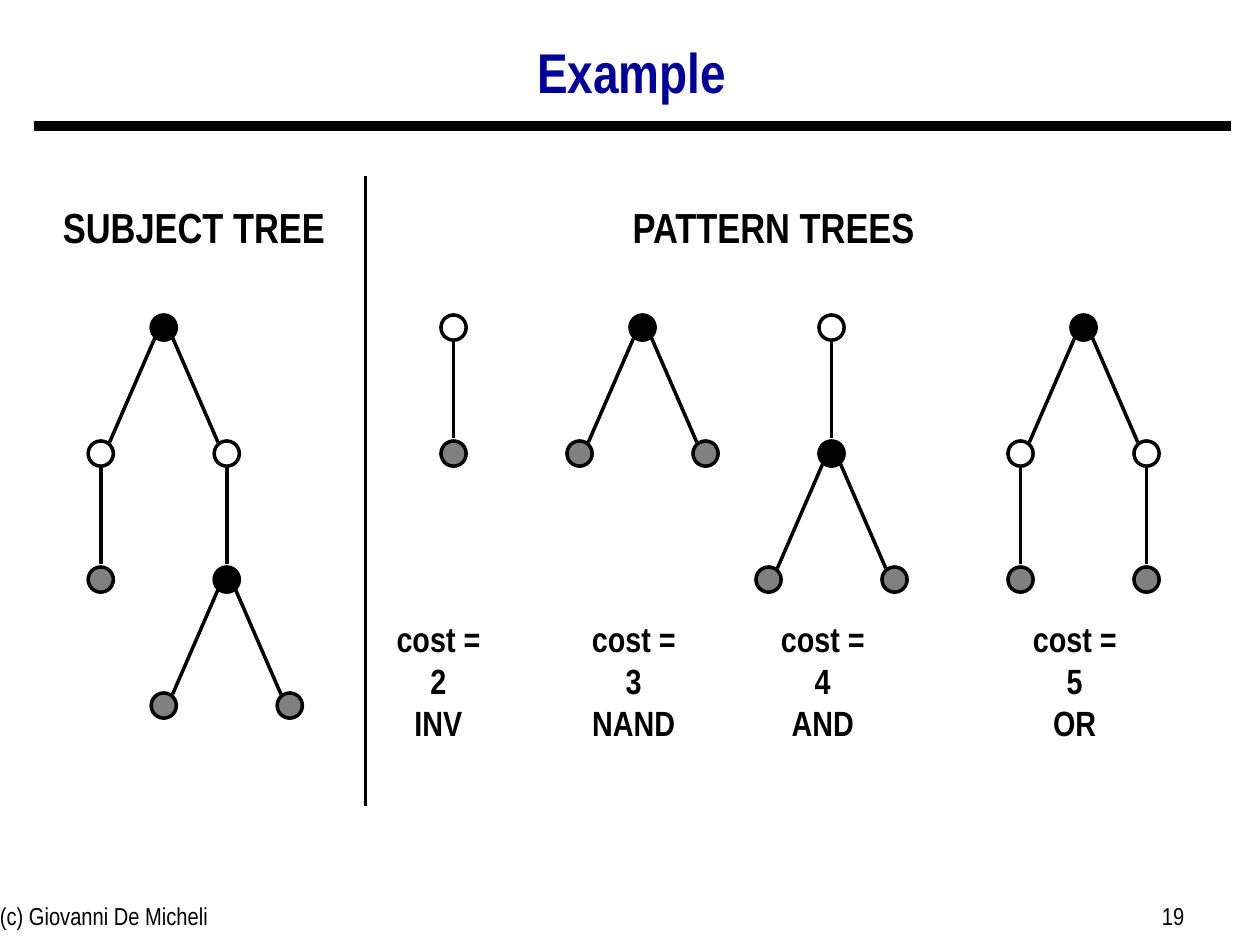
from lxml import etree
from pptx import Presentation
from pptx.dml.color import RGBColor
from pptx.enum.shapes import MSO_CONNECTOR, MSO_SHAPE
from pptx.enum.text import MSO_ANCHOR, PP_ALIGN
from pptx.oxml.ns import qn
from pptx.util import Inches, Pt

STRAIGHT = MSO_CONNECTOR.STRAIGHT
OVAL = MSO_SHAPE.OVAL
MIDDLE = MSO_ANCHOR.MIDDLE
LEFT, CENTER, RIGHT = PP_ALIGN.LEFT, PP_ALIGN.CENTER, PP_ALIGN.RIGHT

FONT = "Arial Narrow"
COLORS = {"black": "000000", "gray": "808080", "title": "000099"}

# A tree is (node kind, child trees); kinds map to fills, None is hollow
FILLS = {"nand": "black", "inv": None, "leaf": "gray"}
LEAF = ("leaf", [])
INV = ("inv", [LEAF])
NAND = ("nand", [LEAF, LEAF])
AND = ("inv", [NAND])
OR = ("nand", [INV, INV])
SUBJECT = ("nand", [INV, AND])

SUBJECT_X = 1.3
PATTERNS = [  # tree, root x, label left, label lines
    (INV, 3.6, 3.13, ["cost = 2", "INV"]),
    (NAND, 5.1, 4.68, ["cost = 3", "NAND"]),
    (AND, 6.6, 6.18, ["cost = 4", "AND"]),
    (OR, 8.6, 8.18, ["cost = 5", "OR"]),
]
HEADINGS = [("SUBJECT TREE", 0.5, 2.08), ("PATTERN TREES", 5, 2.28)]
FOOTERS = [("(c) Giovanni De Micheli", 0, 3, LEFT), ("19", 7.17, 2.23, RIGHT)]

ROOT_Y, LEVEL, SPREAD, NODE = 2.6, 1, 0.5, 0.2


def rgb(name):
    return RGBColor.from_string(COLORS[name])


def style_text(tf, size, color="black", bold=False, align=CENTER):
    for p in tf.paragraphs:
        p.alignment = align
        for r in p.runs:
            r.font.name = FONT
            r.font.size = Pt(size)
            r.font.bold = bold
            r.font.color.rgb = rgb(color)


def add_text(s, lines, box, size, bold=False, align=CENTER, wrap=True):
    tf = s.shapes.add_textbox(*map(Inches, box)).text_frame
    tf.margin_left = tf.margin_right = tf.margin_top = tf.margin_bottom = 0
    tf.word_wrap = wrap
    tf.text = "\n".join(lines)
    style_text(tf, size, bold=bold, align=align)


def add_line(s, x1, y1, x2, y2, width=2):
    line = s.shapes.add_connector(STRAIGHT, *map(Inches, (x1, y1, x2, y2)))
    line.line.color.rgb = rgb("black")
    line.line.width = Pt(width)
    etree.SubElement(line._element.spPr, qn("a:effectLst"))


def add_node(s, kind, x, y):
    node = s.shapes.add_shape(OVAL, Inches(x - NODE / 2), Inches(y - NODE / 2),
                              Inches(NODE), Inches(NODE))
    node.shadow.inherit = False
    if FILLS[kind]:
        node.fill.solid()
        node.fill.fore_color.rgb = rgb(FILLS[kind])
    else:
        node.fill.background()
    node.line.color.rgb = rgb("black")
    node.line.width = Pt(2)


def add_tree(s, tree, x, y):
    """Draw a node, its edges trimmed at the circles, and its subtrees."""
    kind, children = tree
    add_node(s, kind, x, y)
    sides = (-1, 1) if len(children) == 2 else (0,)
    for child, side in zip(children, sides):
        child_x, child_y = x + side * SPREAD, y + LEVEL
        trim_x, trim_top, trim_end = (0.07 * side, 0.08, 0.09) if side else (0, 0.11, 0.12)
        add_line(s, x + trim_x, y + trim_top, child_x - trim_x, child_y - trim_end)
        add_tree(s, child, child_x, child_y)


def main():
    prs = Presentation()
    prs.slide_width, prs.slide_height = Inches(10), Inches(7.5)
    s = prs.slides.add_slide(prs.slide_layouts[5])

    title = s.shapes.title
    title.left, title.top, title.width, title.height = map(Inches, (0.26, 0.22, 9.51, 0.75))
    tf = title.text_frame
    tf.text = "Example"
    tf.vertical_anchor = MIDDLE
    tf.paragraphs[0].line_spacing = 0.9
    style_text(tf, 32, "title", bold=True)
    add_line(s, 0.27, 1, 9.77, 1, width=6)

    for text, left, width, align in FOOTERS:
        add_text(s, [text], (left, 7.15, width, 0.3), 14, align=align)
    for text, left, width in HEADINGS:
        add_text(s, [text], (left, 1.6, width, 0.4), 24, bold=True, wrap=False)

    add_tree(s, SUBJECT, SUBJECT_X, ROOT_Y)
    for tree, x, label_left, label in PATTERNS:
        add_tree(s, tree, x, ROOT_Y)
        add_text(s, label, (label_left, 4.9, 0.7, 1), 20, bold=True)
    add_line(s, 2.9, 1.4, 2.9, 6.4)

    prs.save("out.pptx")


if __name__ == "__main__":
    main()
